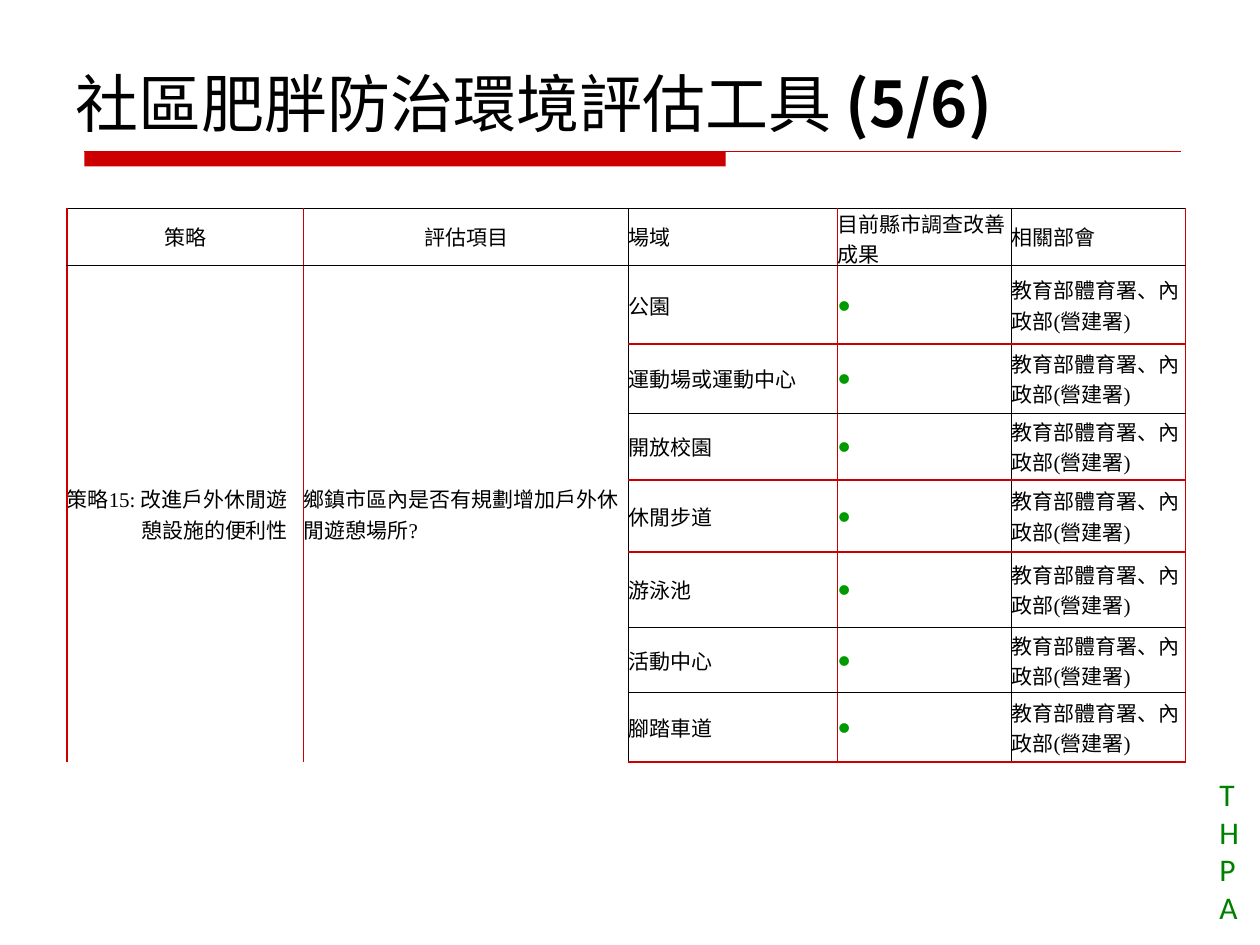
import pptx
import pptx.util
import pptx.dml.color
import pptx.enum.shapes
import pptx.enum.text
import pptx.oxml.ns
from dataclasses import dataclass
from lxml import etree

Inches = pptx.util.Inches
Pt = pptx.util.Pt
MIDDLE = pptx.enum.text.MSO_ANCHOR.MIDDLE
CENTER = pptx.enum.text.PP_ALIGN.CENTER


@dataclass(frozen=True)
class Theme:
    ink: str = "000000"
    red: str = "CC0000"
    dot: str = "009900"
    sidemark: str = "008000"
    serif: str = "Times New Roman"
    sans: str = "Calibri"
    cjk: str = "Noto Sans CJK SC"
    title_size: int = 36
    sidemark_size: int = 18
    table_size: int = 12


THEME = Theme()
THICK_RED = (THEME.red, 1)
THIN_RED = (THEME.red, 0.5)
THIN_INK = (THEME.ink, 0.5)

COLUMN_WIDTHS = [1.88, 2.58, 1.66, 1.38, 1.38]
ROW_HEIGHTS = [0.46, 0.62, 0.55, 0.53, 0.57, 0.6, 0.52, 0.55]
COLUMN_EDGES = [THICK_RED, THICK_RED, THIN_INK, THIN_RED, THIN_INK, THICK_RED]
ROW_EDGES = [THIN_INK, THIN_INK, THICK_RED, THIN_INK, THICK_RED,
             THICK_RED, THIN_INK, THIN_INK, THICK_RED]
MERGED_COLUMNS = 2

HEADINGS = ["策略", "評估項目", "場域", "目前縣市調查改善成果", "相關部會"]
STRATEGY = "策略15: 改進戶外休閒遊憩設施的便利性"
QUESTION = "鄉鎮市區內是否有規劃增加戶外休閒遊憩場所?"
VENUES = ["公園", "運動場或運動中心", "開放校園", "休閒步道", "游泳池", "活動中心", "腳踏車道"]
MINISTRIES = "教育部體育署、內政部(營建署)"


def sub(parent, tag, **attributes):
    return etree.SubElement(parent, pptx.oxml.ns.qn(tag), **attributes)


def rgb(colour):
    return pptx.dml.color.RGBColor.from_string(colour)


def add_run(paragraph, text, size, font, colour, bold=False, east_asian=None):
    run = paragraph.add_run()
    run.text = text
    run.font.size = Pt(size)
    run.font.bold = bold
    run.font.color.rgb = rgb(colour)
    run.font.name = font
    if east_asian:
        sub(run.font._element, "a:ea", typeface=east_asian)


def add_title(slide, left, top, width, height):
    box = slide.shapes.add_textbox(Inches(left), Inches(top), Inches(width), Inches(height))
    frame = box.text_frame
    frame.word_wrap = True
    frame.vertical_anchor = MIDDLE
    title = frame.paragraphs[0]
    add_run(title, "社區肥胖防治環境評估工具 ", THEME.title_size, THEME.serif, THEME.ink,
            east_asian=THEME.cjk)
    add_run(title, "(5/6)", THEME.title_size, THEME.cjk, THEME.ink, bold=True)


def add_title_rule(slide, left, top, width, height):
    bar = slide.shapes.add_shape(pptx.enum.shapes.MSO_SHAPE.RECTANGLE, Inches(left),
                                 Inches(top), Inches(5.09), Inches(height))
    bar.shadow.inherit = False
    bar.fill.solid()
    bar.fill.fore_color.rgb = rgb(THEME.red)
    bar.line.fill.background()
    rule = slide.shapes.add_connector(pptx.enum.shapes.MSO_CONNECTOR.STRAIGHT, Inches(left),
                                      Inches(top), Inches(left + width), Inches(top))
    rule.line.color.rgb = rgb(THEME.red)
    rule.line.width = Pt(0.75)
    sub(rule._element.spPr, "a:effectLst")


def add_sidemark(slide, left, top, width, height):
    box = slide.shapes.add_textbox(Inches(left), Inches(top), Inches(width), Inches(height))
    frame = box.text_frame
    frame.word_wrap = True
    for index, letter in enumerate("THPA"):
        paragraph = frame.add_paragraph() if index else frame.paragraphs[0]
        add_run(paragraph, letter, THEME.sidemark_size, THEME.sans, THEME.sidemark)


def set_borders(cell, row, column):
    edges = {"a:lnL": COLUMN_EDGES[column], "a:lnR": COLUMN_EDGES[column + 1]}
    for tag, edge in (("a:lnT", row), ("a:lnB", row + 1)):
        inside_merge = column < MERGED_COLUMNS and 1 < edge < len(ROW_HEIGHTS)
        edges[tag] = None if inside_merge else ROW_EDGES[edge]
    properties = cell._tc.get_or_add_tcPr()
    for tag, edge in edges.items():
        if edge is None:
            sub(sub(properties, tag), "a:noFill")
            continue
        colour, width = edge
        line = sub(properties, tag, w=str(Pt(width)))
        sub(sub(line, "a:solidFill"), "a:srgbClr", val=colour)


def fill_cell(cell, text, font, colour=THEME.ink, east_asian=THEME.cjk):
    paragraph = cell.text_frame.paragraphs[0]
    add_run(paragraph, text, THEME.table_size, font, colour, east_asian=east_asian)
    return paragraph


def add_assessment_table(slide, left, top, width, height):
    table = slide.shapes.add_table(len(ROW_HEIGHTS), len(COLUMN_WIDTHS), Inches(left),
                                   Inches(top), Inches(width), Inches(height)).table
    table.first_row = table.horz_banding = False
    for column, column_width in zip(table.columns, COLUMN_WIDTHS):
        column.width = Inches(column_width)
    for row, row_height in zip(table.rows, ROW_HEIGHTS):
        row.height = Inches(row_height)
    for row in range(len(ROW_HEIGHTS)):
        for column in range(len(COLUMN_WIDTHS)):
            cell = table.cell(row, column)
            cell.margin_left = cell.margin_right = cell.margin_top = cell.margin_bottom = 0
            cell.vertical_anchor = MIDDLE
            set_borders(cell, row, column)
            cell.fill.background()
    for column in range(MERGED_COLUMNS):
        table.cell(1, column).merge(table.cell(len(VENUES), column))

    for column, heading in enumerate(HEADINGS):
        font = THEME.sans if column else THEME.serif
        paragraph = fill_cell(table.cell(0, column), heading, font)
        if column < MERGED_COLUMNS:
            paragraph.alignment = CENTER
    strategy = fill_cell(table.cell(1, 0), STRATEGY, THEME.serif)
    hanging = Inches(0.59)
    strategy._p.get_or_add_pPr().set("marL", str(hanging))
    strategy._p.get_or_add_pPr().set("indent", str(-hanging))
    fill_cell(table.cell(1, 1), QUESTION, THEME.serif)
    for row, venue in enumerate(VENUES, start=1):
        fill_cell(table.cell(row, 2), venue, THEME.serif)
        fill_cell(table.cell(row, 3), "●", THEME.sans, THEME.dot, east_asian=None)
        fill_cell(table.cell(row, 4), MINISTRIES, THEME.serif)


def main():
    deck = pptx.Presentation()
    deck.slide_width = Inches(10)
    deck.slide_height = Inches(7.5)
    slide = deck.slides.add_slide(deck.slide_layouts[6])
    add_title_rule(slide, 0.67, 1.2, 8.7, 0.12)
    add_sidemark(slide, 9.58, 6.1, 0.32, 1.31)
    add_assessment_table(slide, 0.53, 1.65, 8.88, 4.4)
    add_title(slide, 0.5, 0.43, 9.08, 0.76)
    deck.save("out.pptx")


if __name__ == "__main__":
    main()
